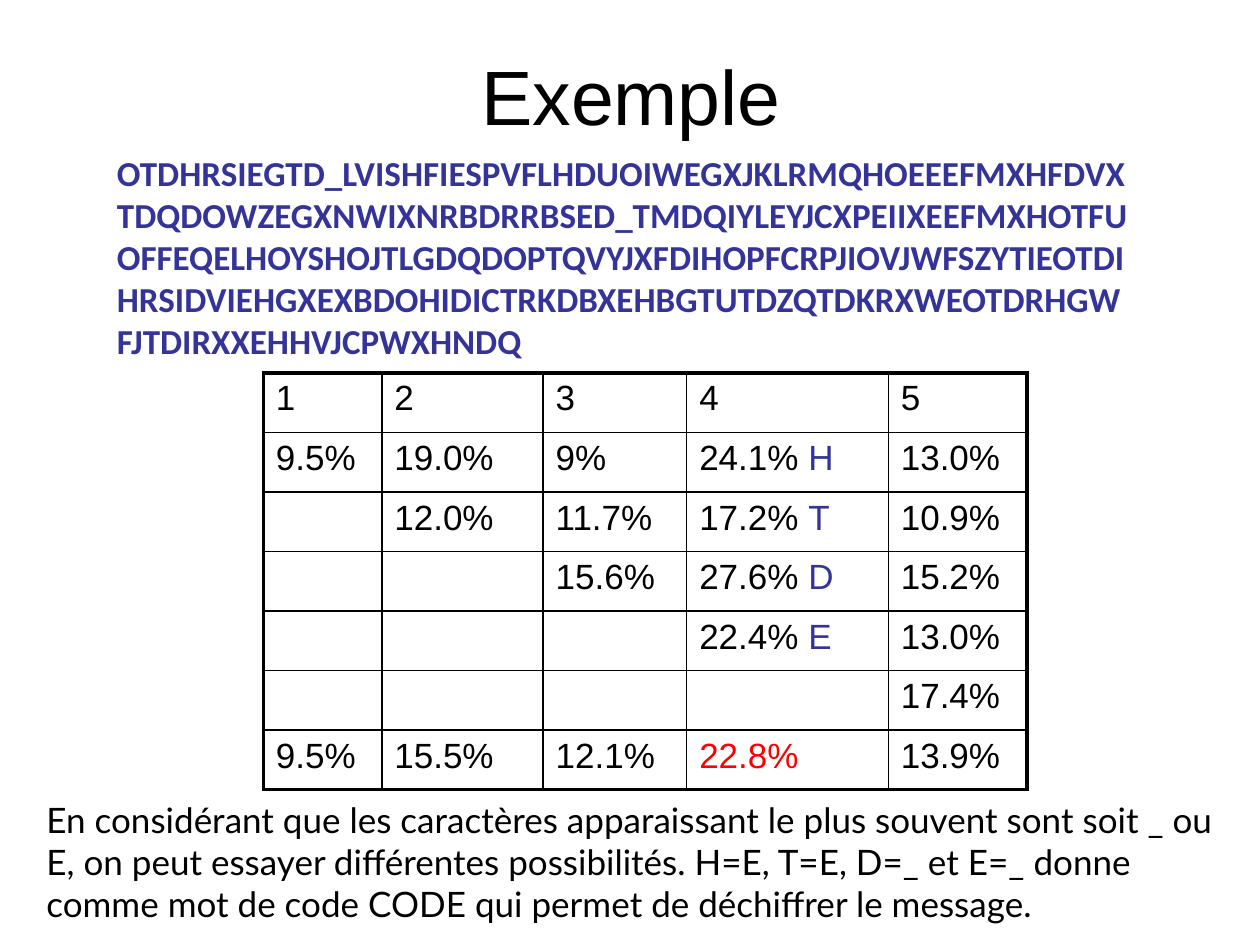
from dataclasses import dataclass

from lxml import etree
from pptx import Presentation
from pptx.dml.color import RGBColor
from pptx.enum.text import MSO_ANCHOR, MSO_AUTO_SIZE, PP_ALIGN
from pptx.oxml.ns import qn
from pptx.util import Inches, Pt

BLACK = RGBColor(0x00, 0x00, 0x00)
BLUE = RGBColor(0x33, 0x33, 0x99)
RED = RGBColor(0xFF, 0x00, 0x00)
MIDDLE, TOP = MSO_ANCHOR.MIDDLE, MSO_ANCHOR.TOP
CENTER, LEFT = PP_ALIGN.CENTER, PP_ALIGN.LEFT
GROW, FIXED = MSO_AUTO_SIZE.SHAPE_TO_FIT_TEXT, MSO_AUTO_SIZE.NONE
SLIDE_W, SLIDE_H = Inches(10), Inches(7.5)
THIN, THICK = Pt(1), Pt(2.25)

CIPHER = (
    "OTDHRSIEGTD_LVISHFIESPVFLHDUOIWEGXJKLRMQHOEEEFMXHFDVX"
    "TDQDOWZEGXNWIXNRBDRRBSED_TMDQIYLEYJCXPEIIXEEFMXHOTFU"
    "OFFEQELHOYSHOJTLGDQDOPTQVYJXFDIHOPFCRPJIOVJWFSZYTIEOTDI"
    "HRSIDVIEHGXEXBDOHIDICTRKDBXEHBGTUTDZQTDKRXWEOTDRHGW"
    "FJTDIRXXEHHVJCPWXHNDQ"
)
CONCLUSION = (
    "En considérant que les caractères apparaissant le plus souvent sont soit _ ou E, "
    "on peut essayer différentes possibilités. H=E, T=E, D=_ et E=_ donne comme mot "
    "de code CODE qui permet de déchiffrer le message."
)
COL_SHARES = (9.4, 12.8, 11.4, 16, 11)
ROWS = (
    ("1", "2", "3", "4", "5"),
    ("9.5%", "19.0%", "9%", "24.1% H", "13.0%"),
    ("", "12.0%", "11.7%", "17.2% T", "10.9%"),
    ("", "", "15.6%", "27.6% D", "15.2%"),
    ("", "", "", "22.4% E", "13.0%"),
    ("", "", "", "", "17.4%"),
    ("9.5%", "15.5%", "12.1%", "22.8%", "13.9%"),
)
HIGHLIGHT = "22.8%"


@dataclass(frozen=True)
class Box:
    left: float
    top: float
    width: float
    height: float

    def lengths(self) -> tuple[int, int, int, int]:
        return (share_x(self.left), share_y(self.top),
                share_x(self.width), share_y(self.height))


@dataclass(frozen=True)
class TextBlock:
    text: str
    box: Box
    font: str
    size: float = 20
    color: RGBColor = BLACK
    bold: bool = False
    align: PP_ALIGN = LEFT
    anchor: MSO_ANCHOR = TOP
    auto_size: MSO_AUTO_SIZE = GROW


BLOCKS = (
    TextBlock("Exemple", Box(5.1, 0, 90, 20), "Arial", 44,
              align=CENTER, anchor=MIDDLE, auto_size=FIXED),
    TextBlock(CIPHER, Box(8.3, 15.33, 82.7, 23.6), "Calibri", color=BLUE, bold=True),
    TextBlock(CONCLUSION, Box(2.7, 83.87, 97.3, 14.67), "Lato"),
)
TABLE_BOX = Box(20.9, 39.47, sum(COL_SHARES), 44.13)


def share_x(percent: float) -> int:
    return round(SLIDE_W * percent / 100)


def share_y(percent: float) -> int:
    return round(SLIDE_H * percent / 100)


def style_run(r, font: str, size: float, color: RGBColor, bold: bool = False) -> None:
    r.font.name = font
    r.font.size = Pt(size)
    r.font.color.rgb = color
    r.font.bold = bold


def add_text(slide, block: TextBlock) -> None:
    tf = slide.shapes.add_textbox(*block.box.lengths()).text_frame
    tf.text = block.text
    tf.word_wrap = True
    tf.auto_size = block.auto_size
    tf.vertical_anchor = block.anchor
    p = tf.paragraphs[0]
    p.alignment = block.align
    style_run(p.runs[0], block.font, block.size, block.color, block.bold)


def set_border(cell, side: str, width: int) -> None:
    ln = etree.SubElement(cell._tc.get_or_add_tcPr(), qn(f"a:ln{side}"), w=str(width))
    fill = etree.SubElement(ln, qn("a:solidFill"))
    etree.SubElement(fill, qn("a:srgbClr"), val=str(BLACK))


def fill_cell(cell, text: str) -> None:
    p = cell.text_frame.paragraphs[0]
    p.font.size = Pt(20)
    value, gap, letter = text.partition(" ")
    parts = ((value + gap, RED if value == HIGHLIGHT else BLACK), (letter, BLUE))
    for part, color in parts:
        if part:
            r = p.add_run()
            r.text = part
            style_run(r, "Arial", 20, color)


def add_frequency_table(slide, box: Box) -> None:
    n_rows, n_cols = len(ROWS), len(COL_SHARES)
    table = slide.shapes.add_table(n_rows, n_cols, *box.lengths()).table
    table.first_row = False
    table.horz_banding = False
    for column, share in zip(table.columns, COL_SHARES):
        column.width = share_x(share)
    for i, texts in enumerate(ROWS):
        table.rows[i].height = share_y(box.height / n_rows)
        for j, text in enumerate(texts):
            cell = table.cell(i, j)
            outer = {"L": j == 0, "R": j == n_cols - 1,
                     "T": i == 0, "B": i == n_rows - 1}
            for side, is_outer in outer.items():
                set_border(cell, side, THICK if is_outer else THIN)
            cell.fill.background()
            fill_cell(cell, text)


def main() -> None:
    prs = Presentation()
    prs.slide_width, prs.slide_height = SLIDE_W, SLIDE_H
    slide = prs.slides.add_slide(prs.slide_layouts[6])
    title, cipher, conclusion = BLOCKS
    add_text(slide, title)
    add_text(slide, cipher)
    add_frequency_table(slide, TABLE_BOX)
    add_text(slide, conclusion)
    prs.save("out.pptx")


if __name__ == "__main__":
    main()
